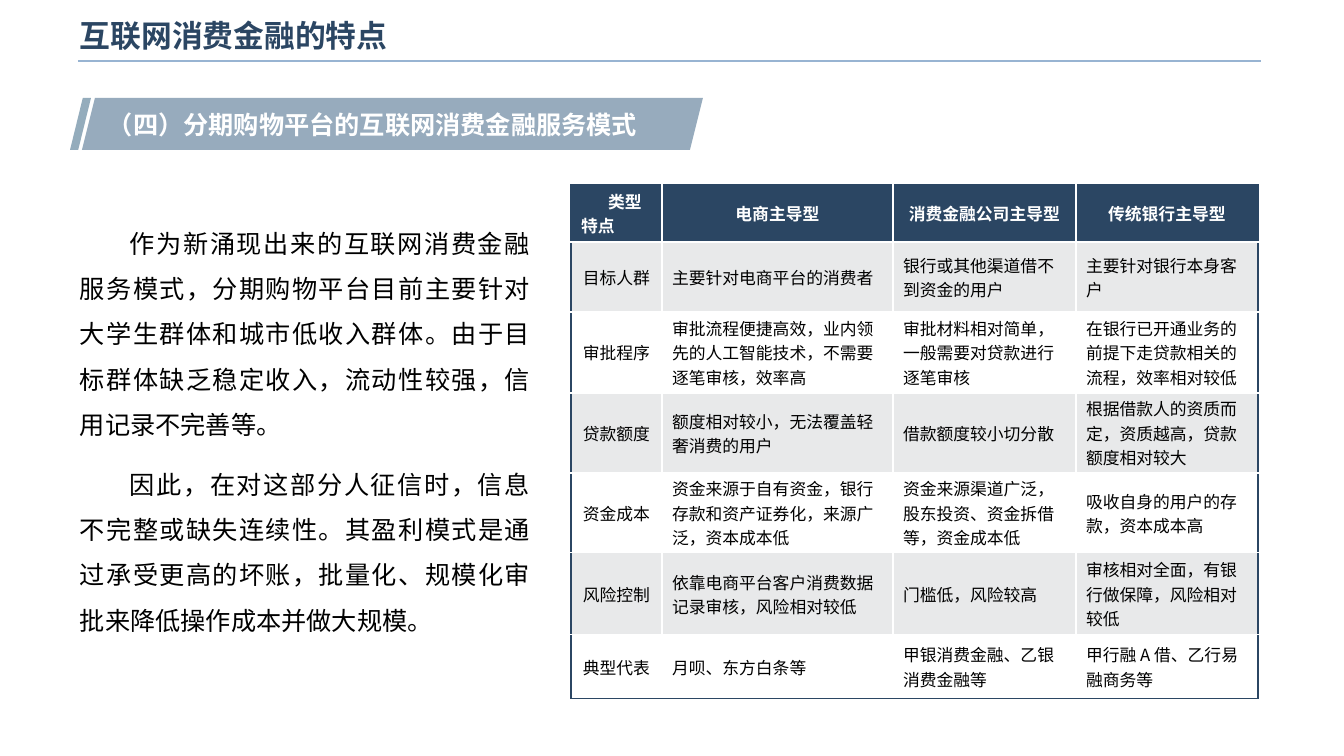
import pptx
import pptx.util
import pptx.dml.color
import pptx.enum.shapes
import pptx.enum.text
import pptx.oxml
import pptx.oxml.ns
import lxml.etree

TITLE = "互联网消费金融的特点"
BANNER = "（四）分期购物平台的互联网消费金融服务模式"
BODY = [
    "作为新涌现出来的互联网消费金融服务模式，分期购物平台目前主要针对大学生群体和城市低收入群体。由于目标群体缺乏稳定收入，流动性较强，信用记录不完善等。",
    "因此，在对这部分人征信时，信息不完整或缺失连续性。其盈利模式是通过承受更高的坏账，批量化、规模化审批来降低操作成本并做大规模。",
]
ROWS = [
    ("类型\n特点", "电商主导型", "消费金融公司主导型", "传统银行主导型"),
    ("目标人群", "主要针对电商平台的消费者", "银行或其他渠道借不到资金的用户", "主要针对银行本身客户"),
    ("审批程序", "审批流程便捷高效，业内领先的人工智能技术，不需要逐笔审核，效率高",
     "审批材料相对简单，一般需要对贷款进行逐笔审核", "在银行已开通业务的前提下走贷款相关的流程，效率相对较低"),
    ("贷款额度", "额度相对较小，无法覆盖轻奢消费的用户", "借款额度较小切分散",
     "根据借款人的资质而定，资质越高，贷款额度相对较大"),
    ("资金成本", "资金来源于自有资金，银行存款和资产证券化，来源广泛，资本成本低",
     "资金来源渠道广泛，股东投资、资金拆借等，资金成本低", "吸收自身的用户的存款，资本成本高"),
    ("风险控制", "依靠电商平台客户消费数据记录审核，风险相对较低", "门槛低，风险较高",
     "审核相对全面，有银行做保障，风险相对较低"),
    ("典型代表", "月呗、东方白条等", "甲银消费金融、乙银消费金融等", "甲行融 A 借、乙行易融商务等"),
]
WIDTHS = [91, 231, 183, 182]
HEIGHTS = [57, 70, 81, 80, 80, 82, 64]
SLANTS = [(70, 98, 21, 52, 0.61, "94ACBC"), (82, 98, 621, 52, 0.25, "97ABBD")]
NAVY, WHITE, BLACK, GREY = "2B4663", "FFFFFF", "000000", "E8E9EA"
FONT = "Noto Sans CJK SC"
ALIGN = pptx.enum.text.PP_ALIGN
MIDDLE = pptx.enum.text.MSO_ANCHOR.MIDDLE


def px(n):
    return pptx.util.Emu(round(n * 914400 / 100.8))


def tint(code):
    return pptx.dml.color.RGBColor.from_string(code)


def style(par, size, code, bold=False, face=FONT, align=ALIGN.LEFT):
    par.alignment = align
    for run in par.runs:
        font = run.font
        font.size = pptx.util.Pt(size)
        font.bold = bold
        font.name = face
        font.color.rgb = tint(code)
        east = lxml.etree.SubElement(run._r.rPr, pptx.oxml.ns.qn("a:ea"))
        east.set("typeface", FONT)


def indent(par, n):
    props = par._p.get_or_add_pPr()
    props.set("marL", "0")
    props.set("indent", str(px(n)))


def text_box(slide, x, y, w, h, text):
    frame = slide.shapes.add_textbox(px(x), px(y), px(w), px(h)).text_frame
    frame.word_wrap = True
    frame.text = text
    return frame


def edge(cell, side, code):
    cell._tc.get_or_add_tcPr().append(pptx.oxml.parse_xml(
        f'<a:ln{side} {pptx.oxml.ns.nsdecls("a")} w="12700"><a:solidFill>'
        f'<a:srgbClr val="{code}"/></a:solidFill></a:ln{side}>'))


def add_head(slide):
    rule = slide.shapes.add_connector(
        pptx.enum.shapes.MSO_CONNECTOR.STRAIGHT, px(78), px(61), px(1261), px(61))
    rule.line.color.rgb = tint("98B4D2")
    rule.line.width = pptx.util.Pt(1)
    lxml.etree.SubElement(rule._element.spPr, pptx.oxml.ns.qn("a:effectLst"))

    title = text_box(slide, 70, 9, 1080, 53, TITLE)
    title.vertical_anchor = MIDDLE
    style(title.paragraphs[0], 22, NAVY, True, "Arial")

    group = slide.shapes.add_group_shape()
    for x, y, w, h, skew, code in SLANTS:
        slant = group.shapes.add_shape(
            pptx.enum.shapes.MSO_SHAPE.PARALLELOGRAM, px(x), px(y), px(w), px(h))
        slant.adjustments[0] = skew
        slant.shadow.inherit = False
        slant.fill.solid()
        slant.fill.fore_color.rgb = tint(code)
        slant.line.fill.background()

    label = text_box(slide, 98, 104, 577, 40, BANNER)
    style(label.paragraphs[0], 18, WHITE, True)


def add_body(slide):
    frame = text_box(slide, 70, 208, 470, 436, "\n".join(BODY))
    for par in frame.paragraphs:
        indent(par, 50)
        par.line_spacing = 1.5
        par.space_after = pptx.util.Pt(10)
        style(par, 18, BLACK, align=ALIGN.JUSTIFY)


def add_grid(slide):
    last_row, last_col = len(ROWS) - 1, len(WIDTHS) - 1
    table = slide.shapes.add_table(
        len(ROWS), len(WIDTHS), px(571), px(185), px(sum(WIDTHS)), px(sum(HEIGHTS))).table
    table.first_row = True
    table.horz_banding = False
    for col, w in zip(table.columns, WIDTHS):
        col.width = px(w)
    for row, h in zip(table.rows, HEIGHTS):
        row.height = px(h)
    for r, line in enumerate(ROWS):
        for c, text in enumerate(line):
            cell = table.cell(r, c)
            cell.text_frame.text = text
            cell.vertical_anchor = MIDDLE
            cell.margin_top = cell.margin_bottom = px(3)
            outer = {"L": c == 0, "R": c == last_col, "T": r == 0, "B": r == last_row}
            for side, out in outer.items():
                edge(cell, side, NAVY if out else WHITE)
            cell.fill.solid()
            cell.fill.fore_color.rgb = tint(NAVY if r == 0 else GREY if r % 2 else WHITE)
            center = (r == 0) != (c == 0)
            for par in cell.text_frame.paragraphs:
                style(par, 12, BLACK if r else WHITE, r == 0,
                      align=ALIGN.CENTER if center else ALIGN.LEFT)
    indent(table.cell(0, 0).text_frame.paragraphs[0], 27)


def main():
    deck = pptx.Presentation()
    deck.slide_width, deck.slide_height = px(1344), px(756)
    slide = deck.slides.add_slide(deck.slide_layouts[6])
    add_head(slide)
    add_body(slide)
    add_grid(slide)
    deck.save("out.pptx")


if __name__ == "__main__":
    main()
